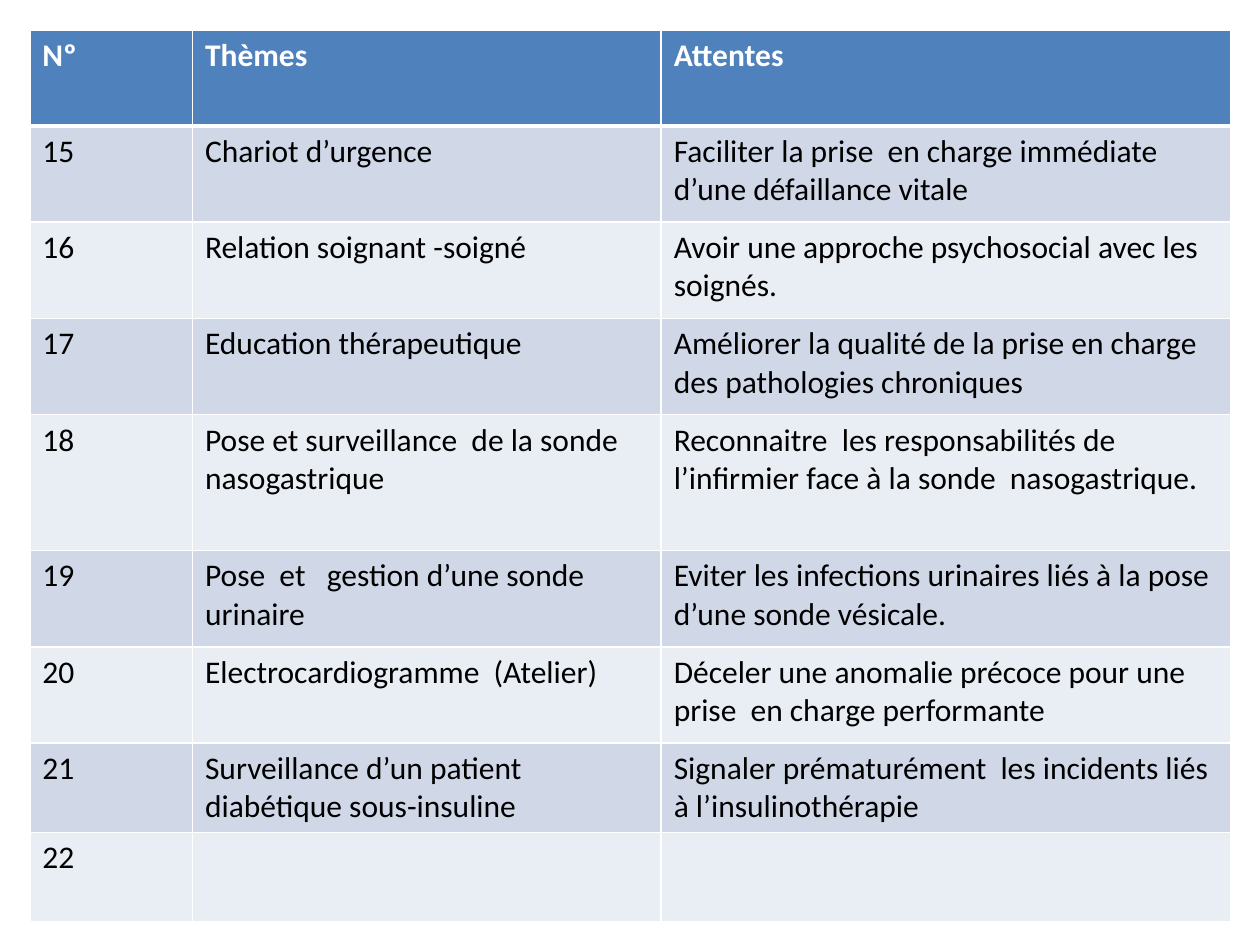
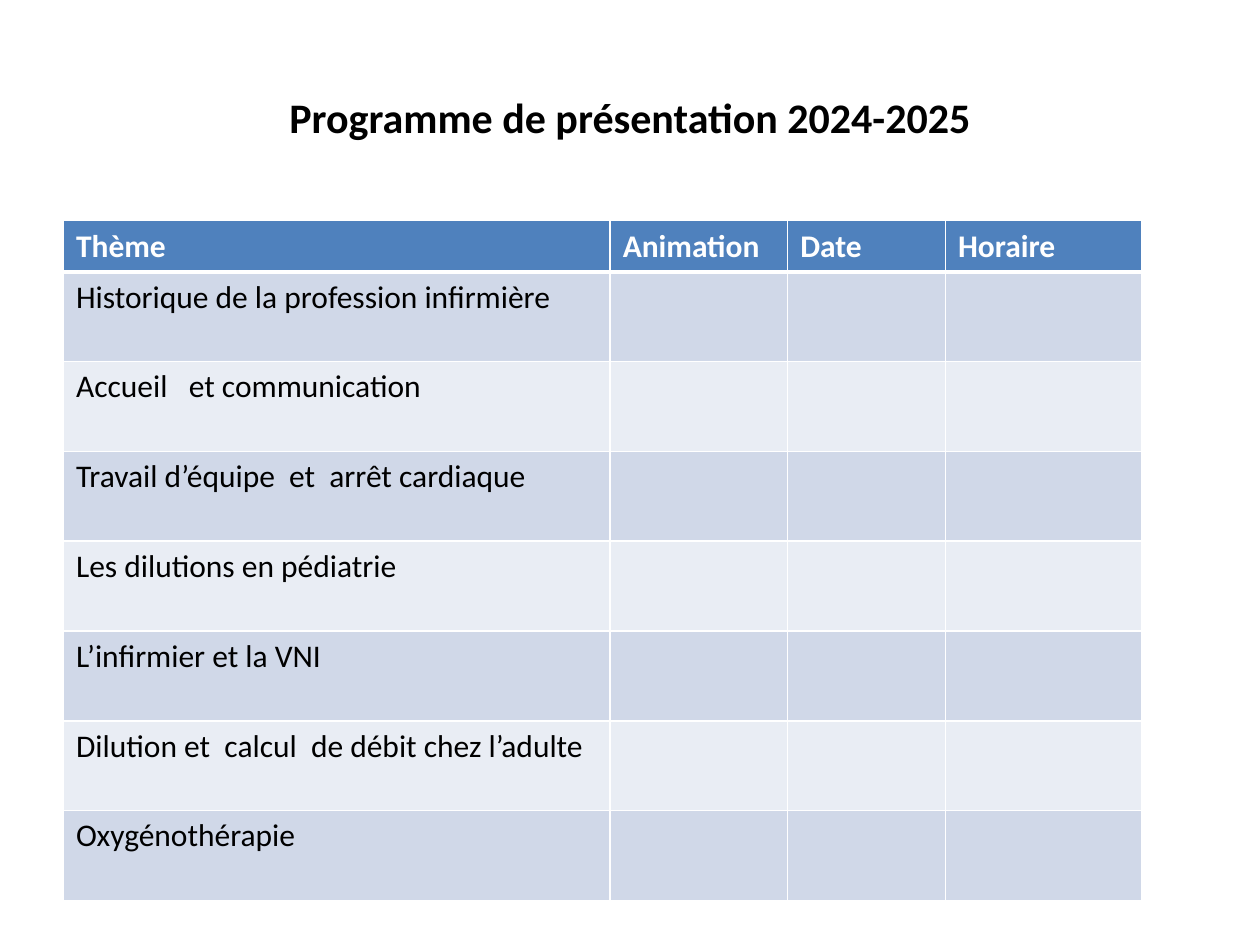
"""Build two slides: the table of themes and the presentation programme."""
from lxml.etree import SubElement as Sub
from pptx import Presentation as Deck
from pptx.dml.color import RGBColor as RGB
from pptx.enum.text import MSO_ANCHOR as Anchor, PP_ALIGN as Align
from pptx.oxml.ns import qn
from pptx.util import Cm, Pt

BLUE = RGB(0x4F, 0x81, 0xBD)
DARK = RGB(0xD0, 0xD8, 0xE8)
LIGHT = RGB(0xE9, 0xED, 0xF4)
WHITE = RGB(0xFF, 0xFF, 0xFF)
BLACK = RGB(0x00, 0x00, 0x00)

TITLE_ONLY, BLANK = 5, 6

THEMES = [
    ("Nº", "Thèmes", "Attentes"),
    ("15", "Chariot d’urgence",
     "Faciliter la prise  en charge immédiate d’une défaillance vitale"),
    ("16", "Relation soignant -soigné",
     "Avoir une approche psychosocial avec les soignés."),
    ("17", "Education thérapeutique",
     "Améliorer la qualité de la prise en charge des pathologies chroniques"),
    ("18", "Pose et surveillance  de la sonde nasogastrique",
     "Reconnaitre  les responsabilités de l’infirmier face à la sonde  nasogastrique."),
    ("19", "Pose  et   gestion d’une sonde urinaire",
     "Eviter les infections urinaires liés à la pose d’une sonde vésicale."),
    ("20", "Electrocardiogramme  (Atelier)",
     "Déceler une anomalie précoce pour une prise  en charge performante"),
    ("21", "Surveillance d’un patient diabétique sous-insuline",
     "Signaler prématurément  les incidents liés à l’insulinothérapie"),
    ("22", "", ""),
]
HEADS = ("Thème", "Animation", "Date", "Horaire")
TOPICS = [
    "Historique de la profession infirmière",
    "Accueil   et communication",
    "Travail d’équipe  et  arrêt cardiaque",
    "Les dilutions en pédiatrie",
    "L’infirmier et la VNI",
    "Dilution et  calcul  de débit chez l’adulte",
    "Oxygénothérapie",
]


def write(frame, text, size=18, color=BLACK, bold=False, align=Align.LEFT):
    para = frame.paragraphs[0]
    para.alignment = align
    para.font.size = Pt(size)
    if text:
        run = para.add_run()
        run.text = text
        font = run.font
        font.name, font.size, font.bold = "Calibri", Pt(size), bold
        font.color.rgb = color


class Page:
    def __init__(self, deck):
        self.deck = deck
        self.slide = None

    def start(self, layout):
        self.slide = self.deck.slides.add_slide(self.deck.slide_layouts[layout])

    def title(self, text):
        head = self.slide.shapes.title
        head.left, head.top = Cm(1.27), Cm(0.76)
        head.width, head.height = Cm(22.86), Cm(3.18)
        head.text_frame.vertical_anchor = Anchor.MIDDLE
        write(head.text_frame, text, size=24, bold=True, align=Align.CENTER)

    def edge(self, cell, side, width):
        line = Sub(cell._tc.get_or_add_tcPr(), qn(f"a:ln{side}"), w=str(Pt(width)))
        Sub(Sub(line, qn("a:solidFill")), qn("a:srgbClr"), val=str(WHITE))

    def table(self, left, top, cols, rows, data):
        grid = self.slide.shapes.add_table(
            len(rows), len(cols), Cm(left), Cm(top), Cm(sum(cols)), Cm(sum(rows))).table
        for col, width in zip(grid.columns, cols):
            col.width = Cm(width)
        for i, (row, height, texts) in enumerate(zip(grid.rows, rows, data)):
            row.height = Cm(height)
            head = i == 0
            fill = BLUE if head else DARK if i % 2 else LIGHT
            for cell, text in zip(row.cells, texts):
                for side in "LRTB":
                    thick = (i, side) in ((0, "B"), (1, "T"))
                    self.edge(cell, side, 3 if thick else 1)
                cell.fill.solid()
                cell.fill.fore_color.rgb = fill
                write(cell.text_frame, text, color=WHITE if head else BLACK, bold=head)


def main():
    deck = Deck()
    deck.slide_width, deck.slide_height = Cm(25.4), Cm(19.05)
    page = Page(deck)

    page.start(BLANK)
    page.table(0.6, 0.6, [3.28, 9.45, 11.48],
               [1.94] * 4 + [2.74] + [1.94] * 2 + [1.8] * 2, THEMES)

    page.start(TITLE_ONLY)
    page.title("Programme de présentation 2024-2025")
    page.table(1.28, 4.45, [11.02, 3.58, 3.18, 3.96], [1.03] + [1.81] * len(TOPICS),
               [HEADS] + [(topic, "", "", "") for topic in TOPICS])

    deck.save("out.pptx")


if __name__ == "__main__":
    main()
